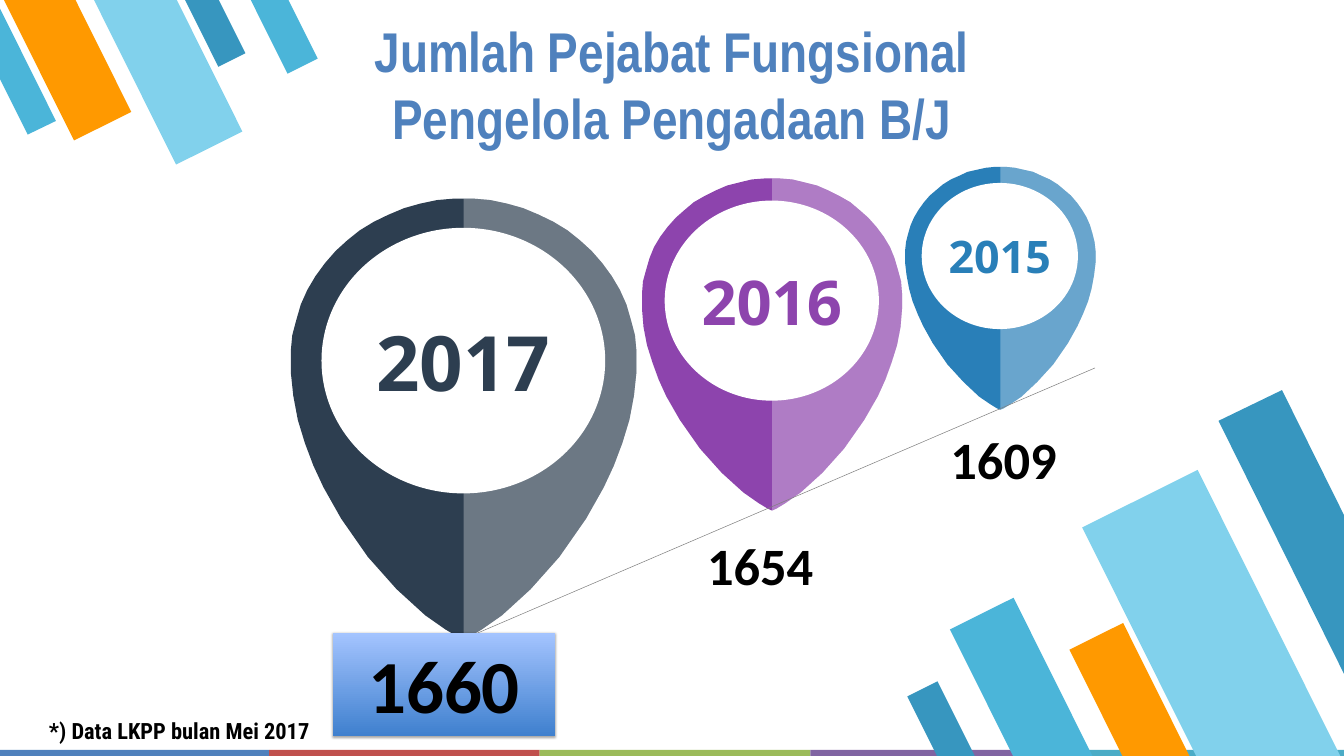
from lxml import etree
from pptx import Presentation
from pptx.dml.color import RGBColor
from pptx.enum.shapes import MSO_CONNECTOR, MSO_SHAPE
from pptx.enum.text import MSO_ANCHOR, MSO_AUTO_SIZE, PP_ALIGN
from pptx.oxml.ns import qn
from pptx.util import Pt

RECT, OVAL = MSO_SHAPE.RECTANGLE, MSO_SHAPE.OVAL
SLANT = MSO_SHAPE.FLOWCHART_MANUAL_INPUT
STRAIGHT = MSO_CONNECTOR.STRAIGHT
LEFT, CENTER = PP_ALIGN.LEFT, PP_ALIGN.CENTER
TOP, MIDDLE, BOTTOM = MSO_ANCHOR.TOP, MSO_ANCHOR.MIDDLE, MSO_ANCHOR.BOTTOM
FIXED, GROW = MSO_AUTO_SIZE.NONE, MSO_AUTO_SIZE.SHAPE_TO_FIT_TEXT

PX = 9144
WIDE, HIGH = 2667, 1500
NAVY, BLUE, CYAN, SKY, AMBER = "4F81BD", "3796BF", "4BB5D9", "81D1EC", "FF9900"
STRIPE = [NAVY, "C0504D", "9BBB59", "8064A2", "4BACC6"]

LOWER = [
    (1956, 1199, 141, 351, CYAN),
    (2276, 956, 256, 636, SKY),
    (2182, 1247, 119, 296, AMBER),
    (1834, 1358, 67, 166, BLUE),
]
UPPER = [
    (397, -22, 60, 149, BLUE),
    (70, -48, 127, 315, AMBER),
    (260, -53, 147, 366, SKY),
    (530, -26, 67, 166, CYAN),
]
LOW_END = [(2544, 774), (2418, 835), (2667, 1337), (2667, 1022)]
TOP_END = [(55, 267), (111, 240), (0, 17), (0, 157)]

PIN_WIDTH = 686
HALF = [
    (0, 0), (18, 0), (53, 3), (86, 10), (118, 19), (149, 32), (178, 46),
    (206, 63), (231, 83), (254, 104), (275, 128), (294, 154), (310, 181),
    (323, 210), (332, 241), (340, 271), (343, 303), (343, 320), (343, 344),
    (338, 391), (329, 439), (315, 485), (298, 530), (278, 573), (243, 635),
    (190, 711), (133, 775), (76, 827), (36, 855), (12, 869), (0, 874),
]
PINS = [
    ("2015", 1985, 331, 378, (1829, 363, 310, 290), 64, "297FB8"),
    ("2016", 1532, 354, 517, (1319, 398, 425, 397), 88, "8D44AD"),
    ("2017", 920, 394, 686, (638, 452, 563, 527), 109, "2D3E50"),
]


def emu(*sizes):
    return [size * PX for size in sizes]


def rgb(code):
    return RGBColor.from_string(code)


def paint(shape, code):
    shape.fill.solid()
    shape.fill.fore_color.rgb = rgb(code)
    shape.line.fill.background()
    shape.shadow.inherit = False
    return shape


def block(shapes, kind, box, code):
    return paint(shapes.add_shape(kind, *emu(*box)), code)


def outline(shapes, points, code):
    pen = shapes.build_freeform(*points[0], scale=PX)
    pen.add_line_segments(points[1:], close=True)
    return paint(pen.convert_to_shape(), code)


def fade(shape, share):
    color = shape.fill._xPr.find(qn("a:solidFill"))[0]
    etree.SubElement(color, qn("a:alpha"), val=str(share * 1000))


def write(shape, text, size, face, code, align=CENTER, anchor=TOP,
          inset=(27, 13), fit=FIXED):
    frame = shape.text_frame
    frame.text = text
    frame.word_wrap = True
    frame.auto_size = fit
    frame.vertical_anchor = anchor
    frame.margin_left = frame.margin_right = inset[0] * PX
    frame.margin_top = frame.margin_bottom = inset[1] * PX
    for para in frame.paragraphs:
        para.alignment = align
        para.space_before = Pt(0)
        font = para.font
        font.size, font.name, font.bold = Pt(size), face, True
        font.color.rgb = rgb(code)


def place(shape, box):
    shape.left, shape.top, shape.width, shape.height = emu(*box)
    shape.element.getparent().append(shape.element)


def bars(slide, rows, turn, points, code):
    shapes = slide.shapes.add_group_shape().shapes
    for *box, tint in rows:
        bar = block(shapes, SLANT, box, tint)
        bar.rotation = turn
        bar.element.spPr.find(qn("a:xfrm")).set("flipH", "1")
    outline(shapes, points, code)


def pin(slide, year, mid, top, width, hole, size, code):
    shapes = slide.shapes.add_group_shape().shapes
    ratio = width / PIN_WIDTH
    right = [(round(mid + x * ratio), round(top + y * ratio)) for x, y in HALF]
    left = [(2 * mid - x, y) for x, y in right[-2:0:-1]]
    outline(shapes, right + left, code)
    fade(outline(shapes, right, "FFFFFF"), 30)
    disc = block(shapes, OVAL, hole, "FFFFFF")
    write(disc, year, size, "Open Sans", code, anchor=MIDDLE, inset=(0, 5))


def trend(slide):
    line = slide.shapes.add_connector(STRAIGHT, *emu(864, 1292, 2173, 730))
    line.line.color.rgb = rgb("808080")
    line.line.width = Pt(0.75)
    etree.SubElement(line.element.spPr, qn("a:effectLst"))


def total(slide):
    box = block(slide.shapes, RECT, (661, 1255, 441, 206), NAVY)
    box.fill.gradient()
    box.fill.gradient_angle = 90
    for stop, code in zip(box.fill.gradient_stops, ["3F80CE", "A4C4FF"]):
        stop.color.rgb = rgb(code)
    glow = etree.SubElement(
        box.element.spPr.find(qn("a:effectLst")), qn("a:outerShdw"),
        blurRad="40000", dist="23000", dir="5400000", rotWithShape="0")
    color = etree.SubElement(glow, qn("a:srgbClr"), val="000000")
    etree.SubElement(color, qn("a:alpha"), val="35000")
    write(box, "1660", 107, "Calibri", "000000", fit=GROW)


def count(slide, text, box):
    label = slide.shapes.add_textbox(*emu(*box))
    write(label, text, 75, "Calibri", "000000", align=LEFT, fit=GROW)


def title(slide):
    head = slide.shapes.title
    place(head, (0, 128, WIDE, 199))
    write(head, "Jumlah Pejabat Fungsional\nPengelola Pengadaan B/J", 80,
          "Arial Narrow", NAVY, anchor=BOTTOM, inset=(27, 27))


def note(slide):
    body = slide.placeholders[1]
    place(body, (0, 1394, 711, 89))
    write(body, "*) Data LKPP bulan Mei 2017", 32, "Roboto Condensed",
          "000000", inset=(24, 12))
    para = body.text_frame.paragraphs[0]
    para.line_spacing = 1.3
    props = para._p.get_or_add_pPr()
    props.set("marL", str(33 * PX))
    props.set("indent", str(-32 * PX))
    props.find(qn("a:defRPr")).addprevious(etree.Element(qn("a:buNone")))


def main():
    deck = Presentation()
    deck.slide_width, deck.slide_height = emu(WIDE, HIGH)
    slide = deck.slides.add_slide(deck.slide_layouts[1])
    for step, code in enumerate(STRIPE):
        block(slide.shapes, RECT, (537 * step - 3, 1488, 537, 20), code)
    bars(slide, LOWER, 153.5, LOW_END, BLUE)
    bars(slide, UPPER, 333.5, TOP_END, CYAN)
    for row in PINS:
        pin(slide, *row)
    trend(slide)
    total(slide)
    count(slide, "1654", (1376, 1044, 315, 153))
    count(slide, "1609", (1859, 835, 315, 152))
    title(slide)
    note(slide)
    deck.save("out.pptx")


if __name__ == "__main__":
    main()
